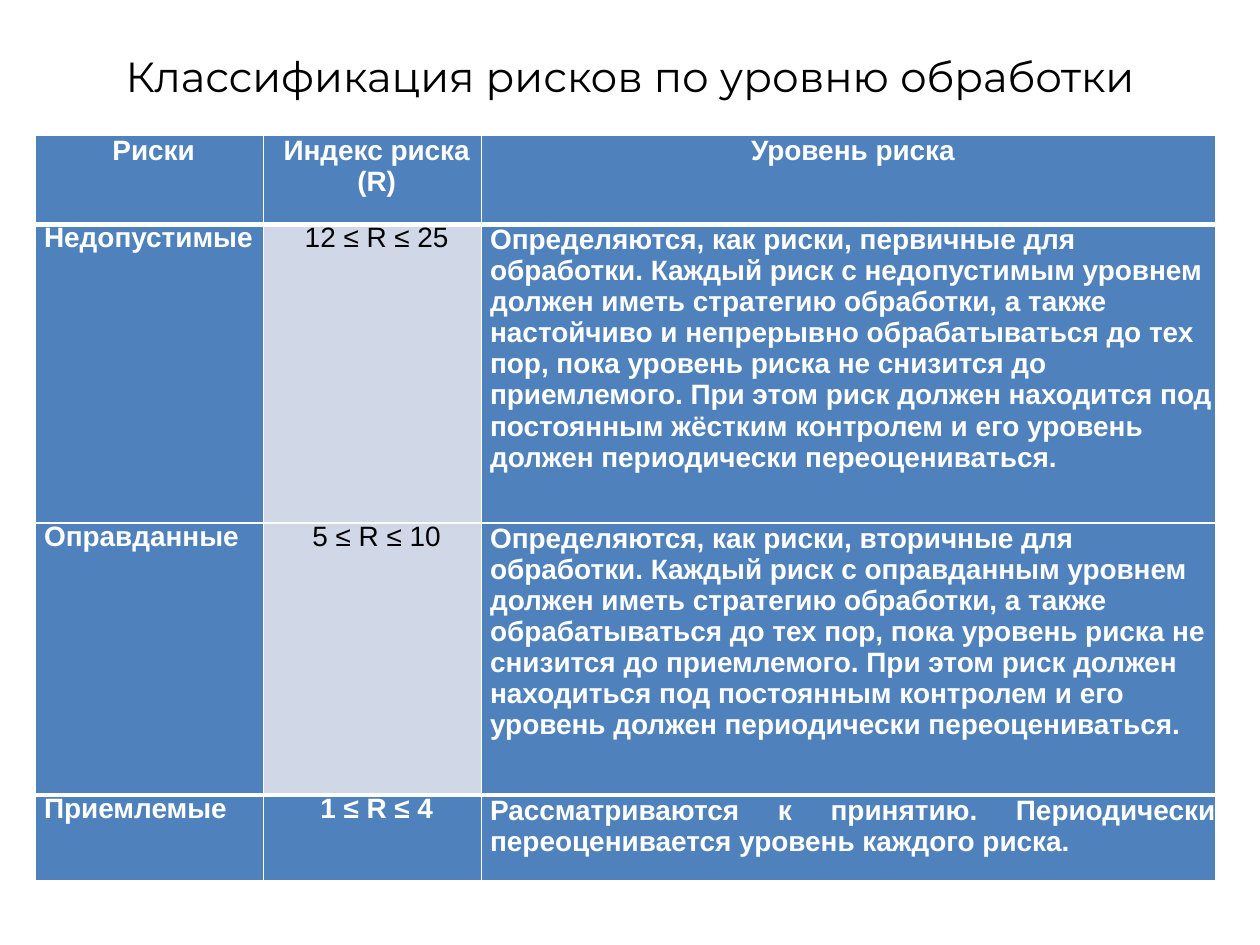
from lxml import etree
from pptx import Presentation
from pptx.dml.color import RGBColor
from pptx.enum.text import MSO_ANCHOR, PP_ALIGN as Align
from pptx.oxml.ns import qn
from pptx.util import Inches, Pt

# Content
TITLE = "Классификация рисков по уровню обработки"
ROWS = [
    ("Риски", "Индекс риска\n(R)", "Уровень риска"),
    ("Недопустимые", "12 ≤ R ≤ 25",
     "Определяются, как риски, первичные для обработки. Каждый риск с "
     "недопустимым уровнем должен иметь стратегию обработки, а также "
     "настойчиво и непрерывно обрабатываться до тех пор, пока уровень риска "
     "не снизится до приемлемого. При этом риск должен находится под "
     "постоянным жёстким контролем и его уровень должен периодически "
     "переоцениваться."),
    ("Оправданные", "5 ≤ R ≤ 10",
     "Определяются, как риски, вторичные для обработки. Каждый риск с "
     "оправданным уровнем должен иметь стратегию обработки, а также "
     "обрабатываться до тех пор, пока уровень риска не снизится до "
     "приемлемого. При этом риск должен находиться под постоянным контролем "
     "и его уровень должен периодически переоцениваться."),
    ("Приемлемые", "1 ≤ R ≤ 4",
     "Рассматриваются к принятию. Периодически переоценивается уровень "
     "каждого риска."),
]
COLORS = {"blue": "4F81BD", "pale": "D0D8E8", "white": "FFFFFF", "black": "000000"}
COLUMN_WIDTHS = [1.81, 1.73, 5.83]
ROW_HEIGHTS = [0.71, 2.37, 2.16, 0.68]
LAST_ROW = len(ROWS) - 1
THICK_EDGES = {0, LAST_ROW - 1}  # rows with a heavy line below


def rgb(name):
    return RGBColor.from_string(COLORS[name])


def set_borders(cell, row):
    widths = {
        "a:lnL": 1,
        "a:lnR": 1,
        "a:lnT": 3 if row - 1 in THICK_EDGES else 1,
        "a:lnB": 3 if row in THICK_EDGES else 1,
    }
    properties = cell._tc.get_or_add_tcPr()
    for position, (tag, width) in enumerate(widths.items()):
        line = etree.Element(qn(tag), w=str(Pt(width)))
        fill = etree.SubElement(line, qn("a:solidFill"))
        etree.SubElement(fill, qn("a:srgbClr"), val=COLORS["white"])
        properties.insert(position, line)


def alignment(row, column):
    if row == 0 or column == 1:
        return Align.CENTER
    return Align.JUSTIFY if (row, column) == (LAST_ROW, 2) else Align.LEFT


def fill_cell(cell, row, column, text):
    pale = column == 1 and 0 < row < LAST_ROW
    cell.margin_left = cell.margin_right = cell.margin_top = cell.margin_bottom = 0
    set_borders(cell, row)
    cell.fill.solid()
    cell.fill.fore_color.rgb = rgb("pale" if pale else "blue")
    cell.text = text
    for para in cell.text_frame.paragraphs:
        para.alignment = alignment(row, column)
        para._p.get_or_add_pPr().set("marL", str(Inches(0.07)))
        if row > 0 and column < 2:
            para.line_spacing = Pt(16.8)
        para.font.name = "Arial"
        para.font.size = Pt(16)
        para.font.bold = not pale
        para.font.color.rgb = rgb("black" if pale else "white")


deck = Presentation()
deck.slide_width, deck.slide_height = Inches(10), Inches(7.5)
page = deck.slides.add_slide(deck.slide_layouts[6])

# Title
box = page.shapes.add_textbox(Inches(0.5), Inches(0.13), Inches(9), Inches(0.94))
frame = box.text_frame
frame.word_wrap = True
frame.vertical_anchor = MSO_ANCHOR.MIDDLE
frame.text = TITLE
heading = frame.paragraphs[0]
heading.alignment = Align.CENTER
heading.font.name = "Montserrat"
heading.font.size = Pt(24)
heading.font.color.rgb = rgb("black")

# Risk table
table = page.shapes.add_table(
    len(ROWS), len(COLUMN_WIDTHS), Inches(0.28), Inches(1.07),
    Inches(sum(COLUMN_WIDTHS)), Inches(sum(ROW_HEIGHTS))).table
for column, width in zip(table.columns, COLUMN_WIDTHS):
    column.width = Inches(width)
for row, height in zip(table.rows, ROW_HEIGHTS):
    row.height = Inches(height)
for row, texts in enumerate(ROWS):
    for column, text in enumerate(texts):
        fill_cell(table.cell(row, column), row, column, text)

deck.save("out.pptx")
